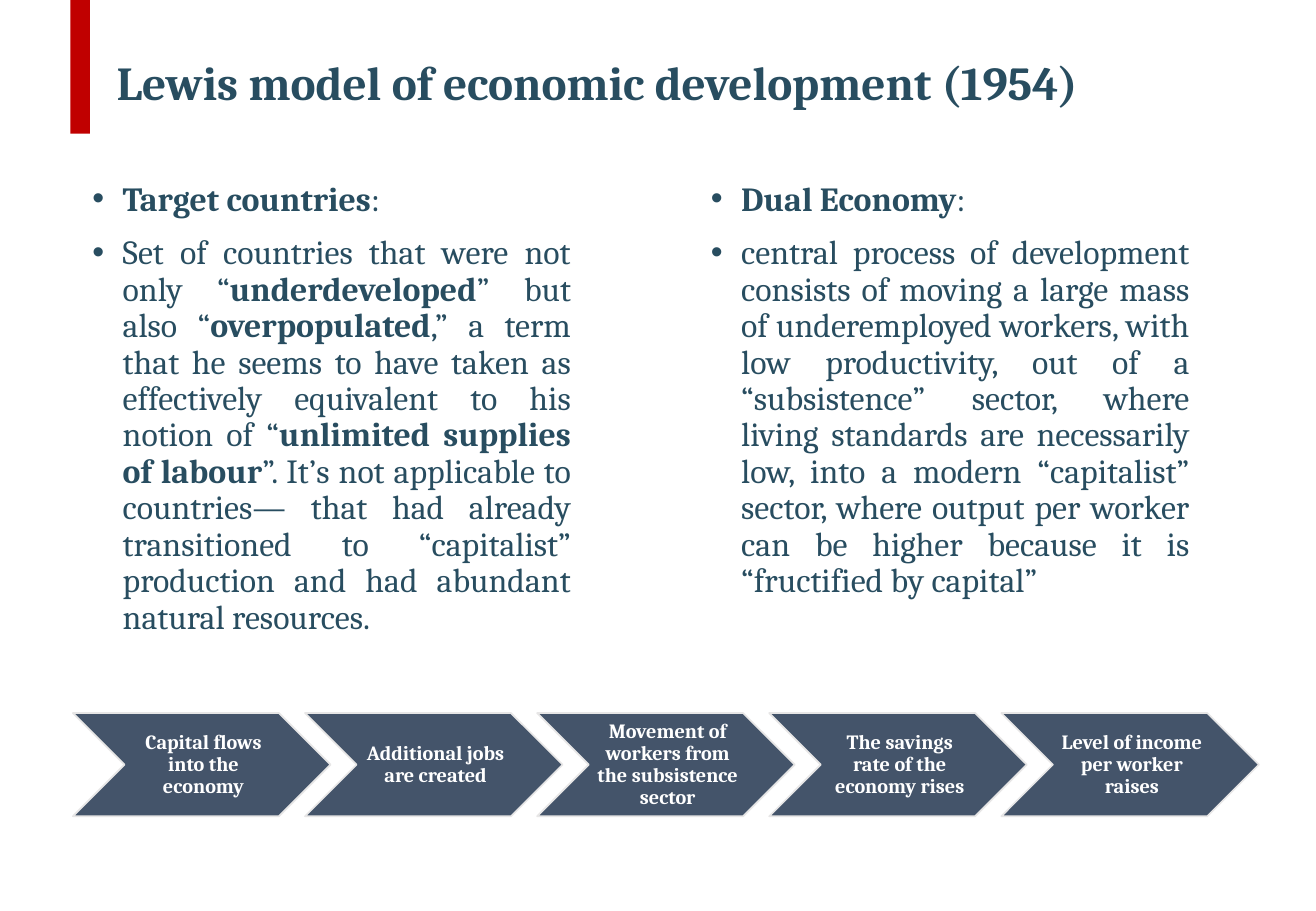
from pptx import Presentation
from pptx.dml.color import RGBColor
from pptx.enum.shapes import MSO_SHAPE
from pptx.enum.text import MSO_ANCHOR, MSO_AUTO_SIZE, PP_ALIGN
from pptx.oxml.ns import qn
from pptx.util import Pt
from lxml import etree

PX = 9144  # one px is 1/100 inch
RECTANGLE, CHEVRON = MSO_SHAPE.RECTANGLE, MSO_SHAPE.CHEVRON
LEFT, CENTER, JUSTIFY = PP_ALIGN.LEFT, PP_ALIGN.CENTER, PP_ALIGN.JUSTIFY
MIDDLE, TOP = MSO_ANCHOR.MIDDLE, MSO_ANCHOR.TOP
TWO_CONTENT = 3

COLORS = {"ink": "284D60", "accent": "C00000", "step": "44546A",
          "edge": "E7E6E6", "white": "FFFFFF"}

TITLE = "Lewis model of economic development (1954)"

# Each paragraph is a list of pieces; every second piece is bold
TARGET_COUNTRIES = [
    ["", "Target countries", ":"],
    ["Set of countries that were not only “", "underdeveloped", "” but also “",
     "overpopulated",
     ",” a term that he seems to have taken as effectively equivalent to his notion of “",
     "unlimited supplies of labour",
     "”. It’s not applicable to countries— that had already transitioned to "
     "“capitalist” production and had abundant natural resources."],
]
DUAL_ECONOMY = [
    ["", "Dual Economy", ":"],
    ["central process of development consists of moving a large mass of underemployed "
     "workers, with low productivity, out of a “subsistence” sector, where living "
     "standards are necessarily low, into a modern “capitalist” sector, where output "
     "per worker can be higher because it is “fructified by capital”"],
]
STEPS = [
    "Capital flows into the economy",
    "Additional jobs are created",
    "Movement of workers from the subsistence sector",
    "The savings rate of the economy rises",
    "Level of income per worker raises",
]


class SlideBuilder:
    font = "Cambria"

    def __init__(self, slide):
        self.slide = slide

    def color(self, name):
        return RGBColor.from_string(COLORS[name])

    def place(self, shape, left, top, width, height):
        shape.left, shape.top = left * PX, top * PX
        shape.width, shape.height = width * PX, height * PX

    def frame(self, shape, anchor):
        frame = shape.text_frame
        frame.word_wrap = True
        frame.auto_size = MSO_AUTO_SIZE.NONE
        frame.vertical_anchor = anchor
        return frame

    def style(self, paragraph, size, color, align, bold=None):
        paragraph.alignment = align
        paragraph.line_spacing = 0.9
        font = paragraph.font
        font.name, font.size, font.bold = self.font, Pt(size), bold
        font.color.rgb = self.color(color)

    def title(self, text, *box):
        title = self.slide.shapes.title
        self.place(title, *box)
        frame = self.frame(title, MIDDLE)
        frame.text = text
        self.style(frame.paragraphs[0], 28, "ink", LEFT, True)

    def bullets(self, index, paragraphs, *box):
        body = self.slide.placeholders[index]
        self.place(body, *box)
        frame = self.frame(body, TOP)
        for number, pieces in enumerate(paragraphs):
            paragraph = frame.add_paragraph() if number else frame.paragraphs[0]
            self.style(paragraph, 20, "ink", JUSTIFY if number else LEFT)
            paragraph.space_before = Pt(10)
            properties = paragraph.font._element.getparent()
            properties.set("marL", str(25 * PX))
            properties.set("indent", str(-25 * PX))
            bullet = etree.Element(qn("a:buChar"), char="•")
            properties.insert(list(properties).index(paragraph.font._element), bullet)
            for position, piece in enumerate(pieces):
                if piece:
                    run = paragraph.add_run()
                    run.text = piece
                    run.font.bold = position % 2 == 1

    def shape(self, kind, fill, *box, edge=None):
        shape = self.slide.shapes.add_shape(kind, *(length * PX for length in box))
        shape.shadow.inherit = False
        shape.fill.solid()
        shape.fill.fore_color.rgb = self.color(fill)
        if edge:
            shape.line.color.rgb = self.color(edge)
            shape.line.width = Pt(1)
        else:
            shape.line.fill.background()
        return shape

    def step(self, text, *box):
        chevron = self.shape(CHEVRON, "step", *box, edge="edge")
        frame = self.frame(chevron, MIDDLE)
        frame.margin_left = 5 * PX
        frame.margin_top = frame.margin_right = frame.margin_bottom = 2 * PX
        frame.text = text
        self.style(frame.paragraphs[0], 12, "white", CENTER, True)


def main():
    deck = Presentation()
    deck.slide_width, deck.slide_height = 1083 * PX, 750 * PX
    builder = SlideBuilder(deck.slides.add_slide(deck.slide_layouts[TWO_CONTENT]))

    # Heading with its red marker
    builder.title(TITLE, 86, 16, 934, 108)
    builder.shape(RECTANGLE, "accent", 58, 0, 16, 110)

    # Two columns of points
    builder.bullets(1, TARGET_COUNTRIES, 66, 145, 414, 476)
    builder.bullets(2, DUAL_ECONOMY, 575, 145, 414, 476)

    # Chain of growth steps
    for number, text in enumerate(STEPS):
        builder.step(text, 60 + 191 * number, 587, 212, 85)

    deck.save("out.pptx")


if __name__ == "__main__":
    main()
